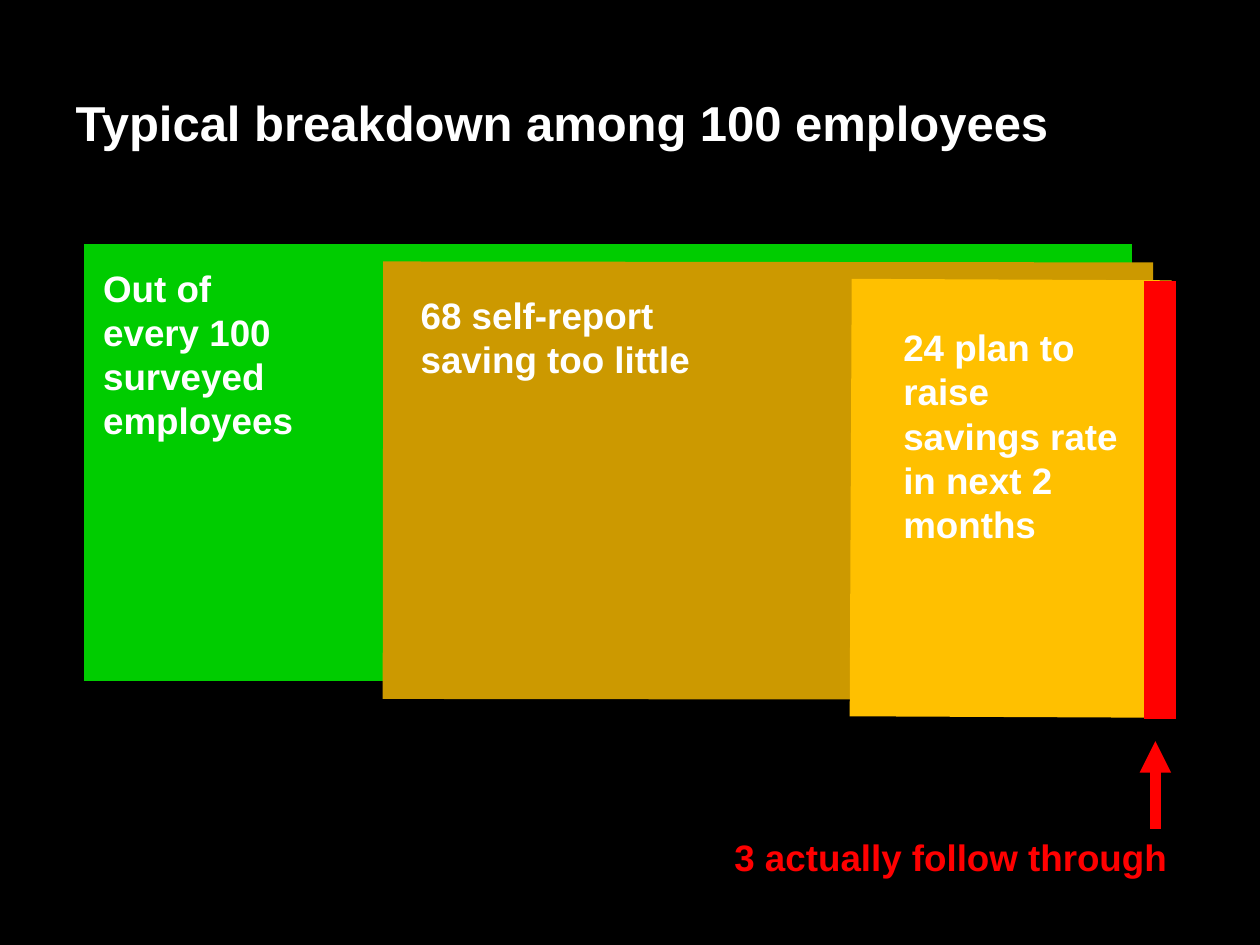
from pptx import Presentation
from pptx.dml.color import RGBColor
from pptx.enum.shapes import MSO_CONNECTOR
from pptx.enum.text import MSO_ANCHOR, MSO_AUTO_SIZE, PP_ALIGN
from pptx.oxml.ns import qn
from pptx.util import Cm, Pt
from lxml.etree import SubElement

COLORS = {"black": "000000", "white": "FFFFFF", "green": "00CC00",
          "ochre": "CC9900", "amber": "FFC000", "red": "FF0000"}
TITLE = "Typical breakdown among 100 employees"
BAR_WEIGHT = 250  # points: the bars are very thick lines
ARROW_WEIGHT = 6

# Start x, start y, end x, end y in cm, colour
BARS = [
    (1.7, 9.32, 22.83, 9.32, "green"),
    (7.72, 9.68, 23.24, 9.7, "ochre"),
    (17.15, 10.03, 23.6, 10.06, "amber"),
    (23.06, 10.08, 23.7, 10.08, "red"),
]
ARROW = (23.29, 16.71, 23.29, 14.94, "red")

# Text, left, top, width, height in cm, colour, alignment
LABELS = [
    ("Out of every 100 surveyed employees", 1.83, 5.23, 4.52, 3.81, "white", PP_ALIGN.LEFT),
    ("68 self-report saving too little", 8.23, 5.77, 7.11, 2.03, "white", PP_ALIGN.LEFT),
    ("24 plan to raise savings rate in next 2 months", 17.96, 6.43, 5.18, 4.7, "white", PP_ALIGN.LEFT),
    ("3 actually follow through", 11.84, 16.71, 11.94, 1.14, "red", PP_ALIGN.RIGHT),
]


def rgb(name):
    return RGBColor.from_string(COLORS[name])


def write(text_frame, text, size, color, alignment):
    text_frame.word_wrap = True
    paragraph = text_frame.paragraphs[0]
    paragraph.text = text
    paragraph.alignment = alignment
    font = paragraph.font
    font.name, font.size, font.bold = "Arial", Pt(size), True
    font.color.rgb = rgb(color)


def add_line(slide, line, weight):
    *ends, color = line
    connector = slide.shapes.add_connector(MSO_CONNECTOR.STRAIGHT, *map(Cm, ends))
    connector.line.color.rgb = rgb(color)
    connector.line.width = Pt(weight)
    SubElement(connector._element.spPr, qn("a:effectLst"))
    return connector


def main():
    presentation = Presentation()
    presentation.slide_width, presentation.slide_height = Cm(25.4), Cm(19.05)
    slide = presentation.slides.add_slide(presentation.slide_layouts[5])
    slide.background.fill.solid()
    slide.background.fill.fore_color.rgb = rgb("black")

    # Title
    title = slide.shapes.title
    title.left, title.top, title.width, title.height = map(Cm, (1.27, 0.56, 22.86, 2.62))
    title.text_frame.vertical_anchor = MSO_ANCHOR.BOTTOM
    write(title.text_frame, TITLE, 28, "white", PP_ALIGN.LEFT)

    # Overlapping bars
    for bar in BARS:
        add_line(slide, bar, BAR_WEIGHT)

    # Labels
    for text, left, top, width, height, color, alignment in LABELS:
        box = slide.shapes.add_textbox(Cm(left), Cm(top), Cm(width), Cm(height))
        write(box.text_frame, text, 21, color, alignment)
        box.text_frame.auto_size = MSO_AUTO_SIZE.SHAPE_TO_FIT_TEXT

    # Arrow to the red bar
    arrow = add_line(slide, ARROW, ARROW_WEIGHT)
    SubElement(arrow.line._get_or_add_ln(), qn("a:tailEnd"), type="triangle")

    presentation.save("out.pptx")


if __name__ == "__main__":
    main()
